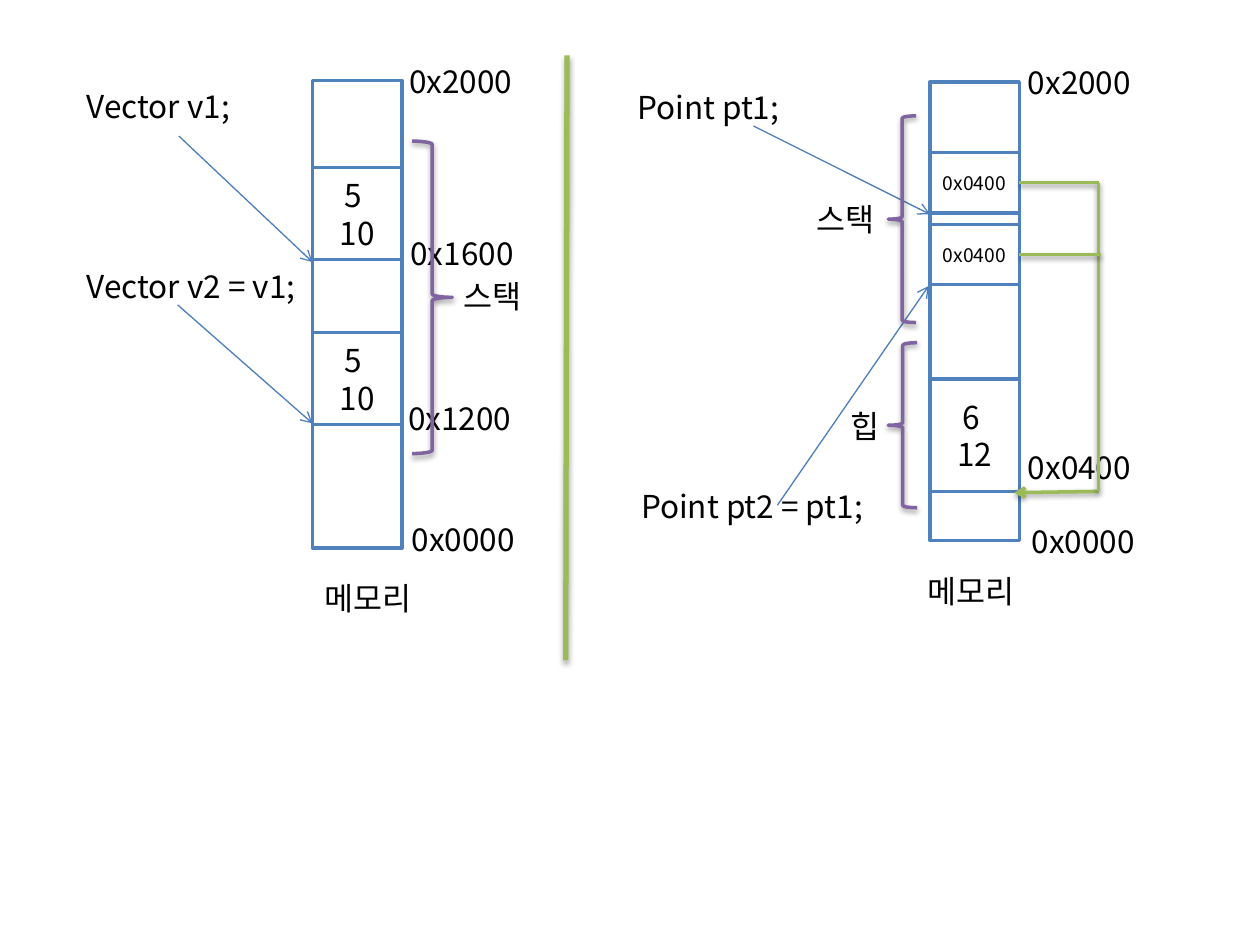
import dataclasses
import typing

import lxml.etree
import pptx
import pptx.dml.color
import pptx.enum.shapes
import pptx.enum.text
import pptx.oxml.ns
import pptx.util

Inches = pptx.util.Inches
Pt = pptx.util.Pt
Shapes = pptx.enum.shapes.MSO_SHAPE
FONT = "Noto Sans CJK KR"
COLORS = {
    "text": "000000",
    "cell": "FFFFFF",
    "border": "4F81BD",
    "pointer": "4B7EBC",
    "reference": "9BBB59",
    "brace": "8064A2",
}
CELL_WIDTH = 0.71
LEFT_MEMORY = 2.48
RIGHT_MEMORY = 7.38


@dataclasses.dataclass
class Cell:
    left: float
    top: float
    height: float
    text: str = ""
    size: float = 18


@dataclasses.dataclass
class Label:
    text: str
    left: float
    top: float
    width: float = 1.34


@dataclasses.dataclass
class Line:
    start: tuple[float, float]
    end: tuple[float, float]
    color: str = "pointer"
    width: float = 0.75
    head: bool = False
    tail: bool = False
    shadow_blur: float = 0
    shadow_distance: float = 1.6
    shadow_alpha: int = 38
    source: typing.Any = None


@dataclasses.dataclass
class Brace:
    kind: typing.Any
    left: float
    top: float
    width: float
    height: float


def rgb(name: str) -> pptx.dml.color.RGBColor:
    return pptx.dml.color.RGBColor.from_string(COLORS[name])


def add_child(parent, tag: str, **attributes):
    child = lxml.etree.SubElement(parent, pptx.oxml.ns.qn(tag))
    for name, value in attributes.items():
        child.set(name, str(value))
    return child


def add_shadow(shape, blur: float, distance: float, alpha: int) -> None:
    effects = add_child(shape._element.spPr, "a:effectLst")
    if blur:
        shadow = add_child(effects, "a:outerShdw", blurRad=Pt(blur),
                           dist=Pt(distance), dir=5400000, rotWithShape=0)
        color = add_child(shadow, "a:srgbClr", val="000000")
        add_child(color, "a:alpha", val=alpha * 1000)


def write_text(frame, text: str, size: float) -> None:
    frame.text = text
    for para in frame.paragraphs:
        para.font.size = Pt(size)
        para.font.color.rgb = rgb("text")
        para.font.name = FONT
        add_child(para.font._element, "a:ea", typeface=FONT)


def draw_cell(page, cell: Cell):
    box = page.shapes.add_shape(Shapes.RECTANGLE, Inches(cell.left), Inches(cell.top),
                                Inches(CELL_WIDTH), Inches(cell.height))
    box.shadow.inherit = False
    box.fill.solid()
    box.fill.fore_color.rgb = rgb("cell")
    box.line.color.rgb = rgb("border")
    box.line.width = Pt(2)
    if cell.text:
        write_text(box.text_frame, cell.text, cell.size)
        box.text_frame.vertical_anchor = pptx.enum.text.MSO_ANCHOR.MIDDLE
        box.text_frame.paragraphs[0].alignment = pptx.enum.text.PP_ALIGN.CENTER
    return box


def draw_label(page, label: Label) -> None:
    box = page.shapes.add_textbox(Inches(label.left), Inches(label.top),
                                  Inches(label.width), Inches(0.4))
    box.text_frame.word_wrap = True
    write_text(box.text_frame, label.text, 18)


def draw_line(page, line: Line) -> None:
    connector = page.shapes.add_connector(
        pptx.enum.shapes.MSO_CONNECTOR.STRAIGHT,
        *(Inches(value) for value in line.start + line.end))
    if line.source is not None:
        connector.begin_connect(line.source, 3)
    connector.line.color.rgb = rgb(line.color)
    connector.line.width = Pt(line.width)
    outline = connector.line._get_or_add_ln()
    if line.head:
        add_child(outline, "a:headEnd", type="arrow")
    if line.tail:
        add_child(outline, "a:tailEnd", type="arrow")
    add_shadow(connector, line.shadow_blur, line.shadow_distance, line.shadow_alpha)


def draw_brace(page, brace: Brace) -> None:
    shape = page.shapes.add_shape(brace.kind, Inches(brace.left), Inches(brace.top),
                                  Inches(brace.width), Inches(brace.height))
    shape.fill.background()
    shape.line.color.rgb = rgb("brace")
    shape.line.width = Pt(2)
    add_shadow(shape, 3.1, 1.6, 38)


def main() -> None:
    deck = pptx.Presentation()
    deck.slide_width, deck.slide_height = Inches(10), Inches(7.5)
    page = deck.slides.add_slide(deck.slide_layouts[6])

    for cell in (
        Cell(LEFT_MEMORY, 0.64, 0.94),
        Cell(LEFT_MEMORY, 1.33, 0.73, "5 \v10"),
        Cell(LEFT_MEMORY, 2.06, 2.29),
        Cell(LEFT_MEMORY, 2.64, 0.73, "5 \v10"),
        Cell(RIGHT_MEMORY, 0.65, 3.64),
        Cell(RIGHT_MEMORY, 3.01, 0.89, "6 \v12"),
    ):
        draw_cell(page, cell)
    first_point, second_point = (
        draw_cell(page, Cell(RIGHT_MEMORY, top, 0.48, "0x0400", 11))
        for top in (1.21, 1.78))

    for label in (
        Label("Vector v1;", 0.59, 0.64, 2.44),
        Label("Vector v2 = v1;", 0.59, 2.07, 2.44),
        Label("0x2000", 3.15, 0.44),
        Label("0x1600", 3.16, 1.81),
        Label("0x1200", 3.14, 3.12),
        Label("0x0000", 3.17, 4.08),
        Label("스택", 3.58, 2.15),
        Label("메모리", 2.48, 4.55),
        Label("Point pt1;", 4.96, 0.65, 3.16),
        Label("Point pt2 = pt1;", 4.99, 3.82, 3.16),
        Label("0x2000", 8.06, 0.45),
        Label("0x0400", 8.06, 3.51),
        Label("0x0000", 8.09, 4.09),
        Label("스택", 6.38, 1.54),
        Label("힙", 6.65, 3.18),
        Label("메모리", 7.26, 4.49),
    ):
        draw_label(page, label)

    for start, end in (
        ((1.42, 1.08), (2.48, 2.08)),
        ((1.41, 2.42), (2.48, 3.36)),
        ((5.98, 1), (7.38, 1.7)),
        ((6.17, 4.01), (7.37, 2.27)),
    ):
        draw_line(page, Line(start, end, tail=True))
    draw_line(page, Line((4.5, 0.44), (4.49, 5.24), "reference", 3, shadow_blur=3.1,
                         shadow_distance=1.8, shadow_alpha=35))
    for start, end, source, head in (
        ((8.05, 3.91), (8.72, 3.9), None, True),
        ((8.09, 1.45), (8.72, 1.45), first_point, False),
        ((8.72, 1.45), (8.72, 3.9), None, False),
        ((8.09, 2.02), (8.74, 2.02), second_point, False),
    ):
        draw_line(page, Line(start, end, "reference", 2, head=head, shadow_blur=3.1,
                             source=source))

    for brace in (
        Brace(Shapes.RIGHT_BRACE, 3.27, 1.12, 0.32, 2.48),
        Brace(Shapes.LEFT_BRACE, 7.05, 0.92, 0.22, 1.64),
        Brace(Shapes.LEFT_BRACE, 7.05, 2.72, 0.23, 1.31),
    ):
        draw_brace(page, brace)
    deck.save("out.pptx")


if __name__ == "__main__":
    main()
